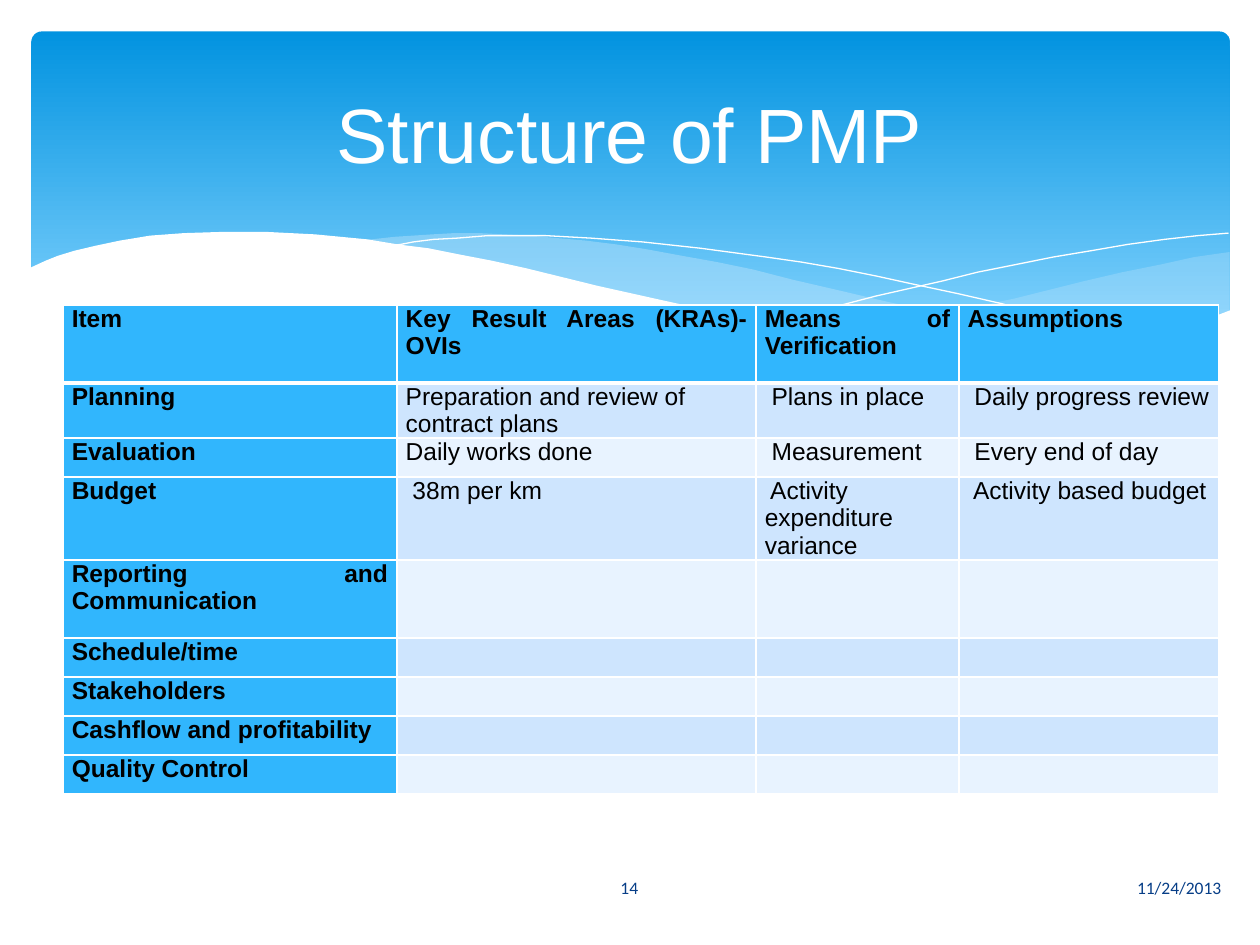
import pptx
import pptx.dml.color
import pptx.enum.shapes
import pptx.enum.text
import pptx.oxml
import pptx.oxml.ns
import pptx.util
from pptx.dml.color import RGBColor
from pptx.enum.text import MSO_ANCHOR, PP_ALIGN
from pptx.util import Inches

WHITE = RGBColor(0xFF, 0xFF, 0xFF)
BLACK = RGBColor(0x00, 0x00, 0x00)
DEEP_SKY = RGBColor(0x02, 0x93, 0xE0)
PALE_SKY = RGBColor(0x83, 0xD3, 0xFE)
WAVE = RGBColor(0xC6, 0xE7, 0xFC)
HEADER = RGBColor(0x31, 0xB6, 0xFD)
BANDS = (RGBColor(0xE8, 0xF3, 0xFF), RGBColor(0xCE, 0xE5, 0xFE))
FOOTER = RGBColor(0x07, 0x3E, 0x87)

RIGHT_WAVE = [
    (9.76, 2), (9.48, 2.04), (9.21, 2.1), (8.91, 2.16), (8.61, 2.23), (8.05, 2.37),
    (7.53, 2.48), (7.06, 2.57), (6.61, 2.65), (6.91, 2.69), (7.19, 2.72), (7.45, 2.75),
    (7.69, 2.77), (8.03, 2.78), (8.35, 2.77), (8.63, 2.75), (8.89, 2.72), (9.13, 2.67),
    (9.35, 2.62), (9.49, 2.57), (9.63, 2.52), (9.76, 2.47),
]
MIDDLE_WAVE = [
    (8.93, 2.73), (8.66, 2.69), (8.37, 2.65), (8.07, 2.6), (7.75, 2.54), (7.41, 2.47),
    (7.06, 2.4), (6.68, 2.31), (6.29, 2.22), (5.98, 2.14), (5.69, 2.08), (5.41, 2.03),
    (5.14, 1.98), (4.89, 1.94), (4.65, 1.91), (4.42, 1.89), (4.2, 1.87), (3.99, 1.86),
    (3.8, 1.85), (3.61, 1.85), (3.44, 1.86), (3.13, 1.88), (2.86, 1.91), (3.23, 1.96),
    (3.62, 2.03), (4.04, 2.11), (4.49, 2.22), (4.91, 2.32), (5.3, 2.4), (5.66, 2.48),
    (6.01, 2.55), (6.34, 2.61), (6.65, 2.66), (6.95, 2.7), (7.22, 2.74), (7.48, 2.76),
    (7.85, 2.78), (8.38, 2.78), (8.67, 2.76),
]
FALLING_CURVE = [
    (3.09, 1.95), (3.18, 1.94), (3.28, 1.92), (3.44, 1.9), (3.63, 1.89), (3.87, 1.87),
    (4.33, 1.87), (4.69, 1.89), (5.1, 1.92), (5.56, 1.97), (6.08, 2.04), (6.36, 2.08),
    (6.65, 2.13), (6.95, 2.19), (7.27, 2.26), (7.6, 2.33), (7.95, 2.41), (8.31, 2.51),
    (8.69, 2.61), (9.07, 2.72),
]
RISING_CURVE = [
    (6.13, 2.57), (6.53, 2.46), (6.95, 2.35), (7.48, 2.23), (7.76, 2.16), (8.06, 2.1),
    (8.36, 2.04), (8.66, 1.99), (8.95, 1.94), (9.24, 1.9), (9.51, 1.87), (9.75, 1.85),
]
WHITE_WAVE = [
    (9.77, 2.46), (9.59, 2.53), (9.4, 2.59), (9.2, 2.65), (8.99, 2.69), (8.75, 2.73),
    (8.5, 2.75), (8.09, 2.77), (7.78, 2.76), (7.44, 2.74), (7.08, 2.7), (6.68, 2.65),
    (6.26, 2.58), (5.79, 2.5), (5.29, 2.39), (4.75, 2.27), (4.18, 2.13), (3.91, 2.07),
    (3.65, 2.02), (3.4, 1.97), (3.16, 1.94), (2.92, 1.9), (2.71, 1.88), (2.5, 1.86),
    (2.11, 1.84), (1.77, 1.84), (1.46, 1.85), (1.19, 1.87), (0.95, 1.91), (0.76, 1.95),
    (0.59, 1.99), (0.46, 2.03), (0.36, 2.07), (0.23, 2.13), (0.23, 3.29), (9.77, 3.29),
]

COLUMN_WIDTHS = (2.65, 2.85, 1.61, 2.06)
ROW_HEIGHT = 0.31
TALL_ROWS = (0, 4)
ROWS = [
    ("Item", "Key Result Areas (KRAs)-OVIs", "Means of Verification", "Assumptions"),
    ("Planning", "Preparation and review of contract plans", " Plans in place", " Daily progress review"),
    ("Evaluation", "Daily works done", " Measurement", " Every end of day"),
    ("Budget", " 38m per km", " Activity expenditure variance", " Activity based budget"),
    ("Reporting and Communication", "", "", ""),
    ("Schedule/time", "", "", ""),
    ("Stakeholders", "", "", ""),
    ("Cashflow and profitability", "", "", ""),
    ("Quality Control", "", "", ""),
]


class SlideBuilder:
    """Holds the style and the slide being built."""

    heading_font = "Arial"
    footer_font = "Calibri"

    def __init__(self, presentation):
        self.slide = presentation.slides.add_slide(presentation.slide_layouts[5])

    def style(self, paragraph, font, size, color, alignment, bold=False):
        paragraph.alignment = alignment
        paragraph.font.name = font
        paragraph.font.size = pptx.util.Pt(size)
        paragraph.font.color.rgb = color
        paragraph.font.bold = bold

    def banner(self, left, top, width, height):
        shape = self.slide.shapes.add_shape(
            pptx.enum.shapes.MSO_SHAPE.ROUNDED_RECTANGLE,
            Inches(left), Inches(top), Inches(width), Inches(height))
        shape.adjustments[0] = 0.03
        shape.shadow.inherit = False
        shape.line.fill.background()
        shape.fill.gradient()
        shape.fill.gradient_angle = 270
        for stop, color, position in zip(shape.fill.gradient_stops, (DEEP_SKY, PALE_SKY), (0, 0.9)):
            stop.color.rgb = color
            stop.position = position

    def outline(self, points, closed):
        corners = [(Inches(x), Inches(y)) for x, y in points]
        builder = self.slide.shapes.build_freeform(*corners[0])
        builder.add_line_segments(corners[1:], close=closed)
        shape = builder.convert_to_shape()
        shape.shadow.inherit = False
        return shape

    def wave(self, points, color, opacity=100):
        shape = self.outline(points, True)
        shape.line.fill.background()
        shape.fill.solid()
        shape.fill.fore_color.rgb = color
        if opacity < 100:
            color_element = shape.fill._xPr.find(".//" + pptx.oxml.ns.qn("a:srgbClr"))
            alpha = pptx.oxml.parse_xml(
                f'<a:alpha {pptx.oxml.ns.nsdecls("a")} val="{opacity * 1000}"/>')
            color_element.append(alpha)

    def curve(self, points):
        shape = self.outline(points, False)
        shape.fill.background()
        shape.line.color.rgb = WHITE
        shape.line.width = 0

    def title(self, text, left, top, width, height):
        shape = self.slide.shapes.title
        shape.left, shape.top = Inches(left), Inches(top)
        shape.width, shape.height = Inches(width), Inches(height)
        shape.text_frame.text = text
        shape.text_frame.vertical_anchor = MSO_ANCHOR.MIDDLE
        self.style(shape.text_frame.paragraphs[0], self.heading_font, 44, WHITE, PP_ALIGN.CENTER)
        self.slide.shapes._spTree.append(shape._element)

    def footer(self, text, left, width, alignment):
        shape = self.slide.shapes.add_textbox(Inches(left), Inches(6.84), Inches(width), Inches(0.4))
        shape.text_frame.word_wrap = True
        shape.text_frame.vertical_anchor = MSO_ANCHOR.MIDDLE
        shape.text_frame.text = text
        self.style(shape.text_frame.paragraphs[0], self.footer_font, 10, FOOTER, alignment)

    def borders(self, cell, row_index):
        properties = cell._tc.get_or_add_tcPr()
        widths = {"L": 1, "R": 1, "T": 3 if row_index == 1 else 1, "B": 3 if row_index == 0 else 1}
        for side, width in widths.items():
            properties.append(pptx.oxml.parse_xml(
                f'<a:ln{side} {pptx.oxml.ns.nsdecls("a")} w="{pptx.util.Pt(width)}">'
                f'<a:solidFill><a:srgbClr val="{WHITE}"/></a:solidFill></a:ln{side}>'))

    def table(self, left, top, rows):
        heights = [ROW_HEIGHT * (2 if index in TALL_ROWS else 1) for index in range(len(rows))]
        table = self.slide.shapes.add_table(
            len(rows), len(COLUMN_WIDTHS), Inches(left), Inches(top),
            Inches(sum(COLUMN_WIDTHS)), Inches(sum(heights))).table
        table.first_row = table.horz_banding = False
        for column, width in zip(table.columns, COLUMN_WIDTHS):
            column.width = Inches(width)
        for row_index, (texts, height) in enumerate(zip(rows, heights)):
            table.rows[row_index].height = Inches(height)
            for column_index, text in enumerate(texts):
                heading = row_index == 0 or column_index == 0
                cell = table.cell(row_index, column_index)
                cell.margin_left = cell.margin_right = Inches(0.07)
                cell.margin_top = cell.margin_bottom = 0
                self.borders(cell, row_index)
                cell.fill.solid()
                cell.fill.fore_color.rgb = HEADER if heading else BANDS[row_index % 2]
                cell.text = text
                alignment = PP_ALIGN.JUSTIFY if heading else PP_ALIGN.LEFT
                self.style(cell.text_frame.paragraphs[0], self.heading_font, 14, BLACK, alignment, heading)


def main():
    presentation = pptx.Presentation()
    presentation.slide_width, presentation.slide_height = Inches(10), Inches(7.5)
    builder = SlideBuilder(presentation)
    builder.banner(0.25, 0.25, 9.51, 2.7)
    builder.wave(RIGHT_WAVE, WAVE, 29)
    builder.wave(MIDDLE_WAVE, WAVE, 40)
    builder.curve(FALLING_CURVE)
    builder.curve(RISING_CURVE)
    builder.wave(WHITE_WAVE, WHITE)
    builder.table(0.5, 2.42, ROWS)
    builder.footer("11/24/2013", 5.65, 4.14, PP_ALIGN.RIGHT)
    builder.footer("14", 4.36, 1.27, PP_ALIGN.CENTER)
    builder.title("Structure of PMP", 0.5, 0.37, 9, 1.37)
    presentation.save("out.pptx")


if __name__ == "__main__":
    main()
